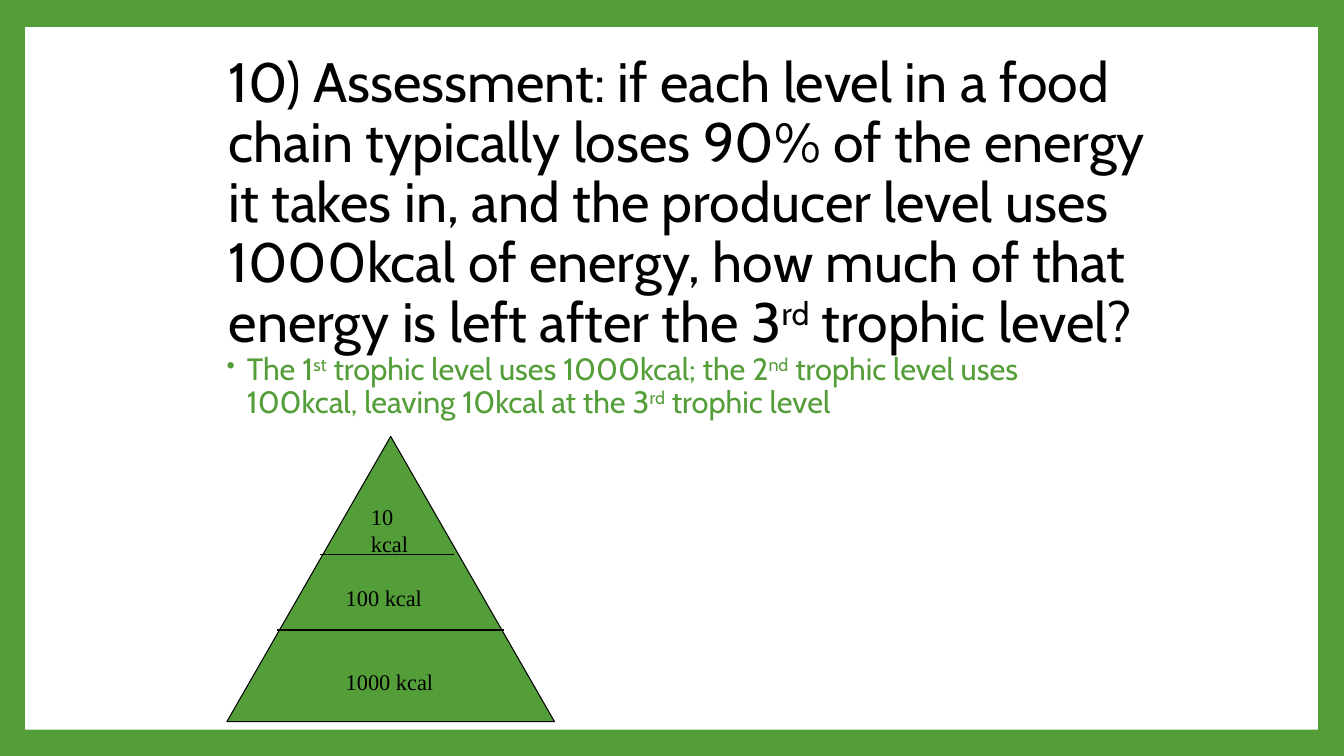
"""Build the food chain assessment slide with its energy pyramid."""
from lxml.etree import SubElement
from pptx import Presentation
from pptx.dml.color import RGBColor
from pptx.enum.shapes import MSO_CONNECTOR, MSO_SHAPE
from pptx.enum.text import MSO_ANCHOR
from pptx.oxml.ns import qn
from pptx.util import Inches, Pt

QUESTION = [
    ("10) Assessment: if each level in a food chain typically loses 90% of the energy "
     "it takes in, and the producer level uses 1000kcal of energy, how much of that "
     "energy is left after the 3", False),
    ("rd", True),
    (" trophic level?", False),
]
ANSWER = [
    ("The 1", False),
    ("st", True),
    (" trophic level uses 1000kcal; the 2", False),
    ("nd", True),
    (" trophic level uses 100kcal, leaving 10kcal at the 3", False),
    ("rd", True),
    (" trophic level", False),
]
QUESTION_BOX = (2.17, 1.17, 9.5, 1.72)
ANSWER_BOX = (2.1, 3.46, 9.08, 0.91)
PANEL_BOX = (0.25, 0.27, 12.82, 6.97)
PYRAMID_BOX = (2.25, 4.33, 3.25, 2.83)
LEVELS = [
    ("10 kcal", (3.58, 4.94, 0.75, 0.64)),
    ("100 kcal", (3.33, 5.75, 1.25, 0.37)),
    ("1000 kcal", (3.33, 6.58, 1.25, 0.37)),
]
DIVIDERS = [(2.75, 5, 6.25), (3.17, 4.5, 5.5)]

THEME = {
    "green": RGBColor(0x54, 0x9E, 0x39),
    "white": RGBColor(255, 255, 255),
    "black": RGBColor(0, 0, 0),
    "outline": Pt(0.75),
    "question": {"name": "Cabin", "size": Pt(39.6)},
    "answer": {"name": "Cabin", "size": Pt(22)},
    "level": {"name": "Times New Roman", "size": Pt(16)},
}


def inches(values):
    return [Inches(value) for value in values]


def add_outline(shape):
    shape.line.color.rgb = THEME["black"]
    shape.line.width = THEME["outline"]


def add_filled(shapes, kind, box, color):
    shape = shapes.add_shape(kind, *inches(box))
    shape.shadow.inherit = False
    shape.fill.solid()
    shape.fill.fore_color.rgb = color
    shape.line.fill.background()
    return shape


def add_text(shapes, box, parts, style, color, anchor=MSO_ANCHOR.TOP):
    frame = shapes.add_textbox(*inches(box)).text_frame
    frame.word_wrap = True
    frame.vertical_anchor = anchor
    paragraph = frame.paragraphs[0]
    for text, raised in parts:
        run = paragraph.add_run()
        run.text = text
        for name, value in THEME[style].items():
            setattr(run.font, name, value)
        run.font.color.rgb = color
        if raised:
            run._r.get_or_add_rPr().set("baseline", "30000")
    return paragraph


def add_bullet(paragraph, color):
    properties = paragraph._p.get_or_add_pPr()
    properties.set("marL", str(Inches(0.25)))
    properties.set("indent", str(Inches(-0.2)))
    bullet_color = SubElement(properties, qn("a:buClr"))
    SubElement(bullet_color, qn("a:srgbClr"), val=str(color))
    SubElement(properties, qn("a:buSzPct"), val="80000")
    SubElement(properties, qn("a:buChar"), char="•")


def add_pyramid(shapes):
    pyramid = add_filled(shapes, MSO_SHAPE.ISOSCELES_TRIANGLE, PYRAMID_BOX, THEME["green"])
    add_outline(pyramid)
    for left, right, height in DIVIDERS:
        divider = shapes.add_connector(
            MSO_CONNECTOR.STRAIGHT, *inches((left, height, right, height)))
        add_outline(divider)
        SubElement(divider._element.spPr, qn("a:effectLst"))
    for label, box in LEVELS:
        add_text(shapes, box, [(label, False)], "level", THEME["black"])


def main():
    presentation = Presentation()
    presentation.slide_width, presentation.slide_height = inches((13.33, 7.5))
    slide = presentation.slides.add_slide(presentation.slide_layouts[6])
    slide.background.fill.solid()
    slide.background.fill.fore_color.rgb = THEME["green"]
    add_filled(slide.shapes, MSO_SHAPE.RECTANGLE, PANEL_BOX, THEME["white"])
    question = add_text(slide.shapes, QUESTION_BOX, QUESTION, "question",
                        THEME["black"], MSO_ANCHOR.MIDDLE)
    answer = add_text(slide.shapes, ANSWER_BOX, ANSWER, "answer", THEME["green"])
    add_bullet(answer, THEME["green"])
    for paragraph in (question, answer):
        paragraph.line_spacing = 0.9
    add_pyramid(slide.shapes.add_group_shape().shapes)
    presentation.save("out.pptx")


if __name__ == "__main__":
    main()
